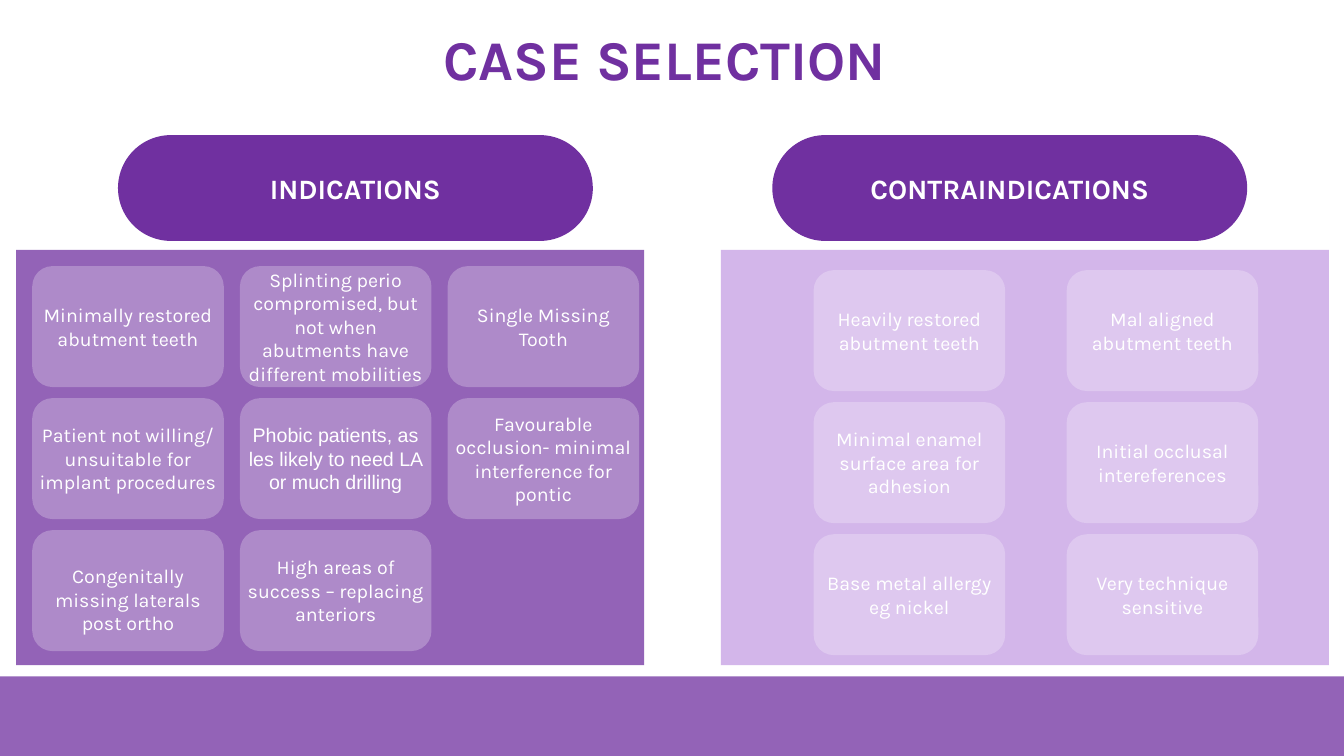
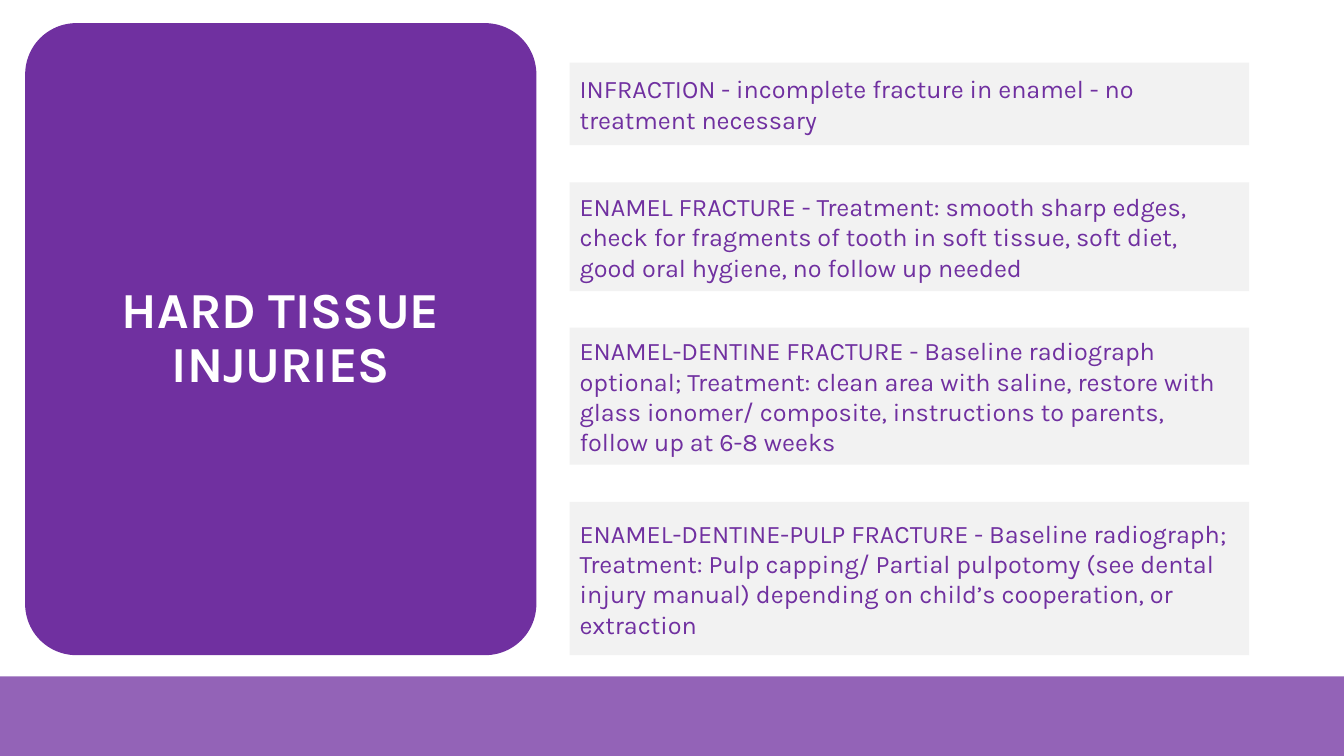
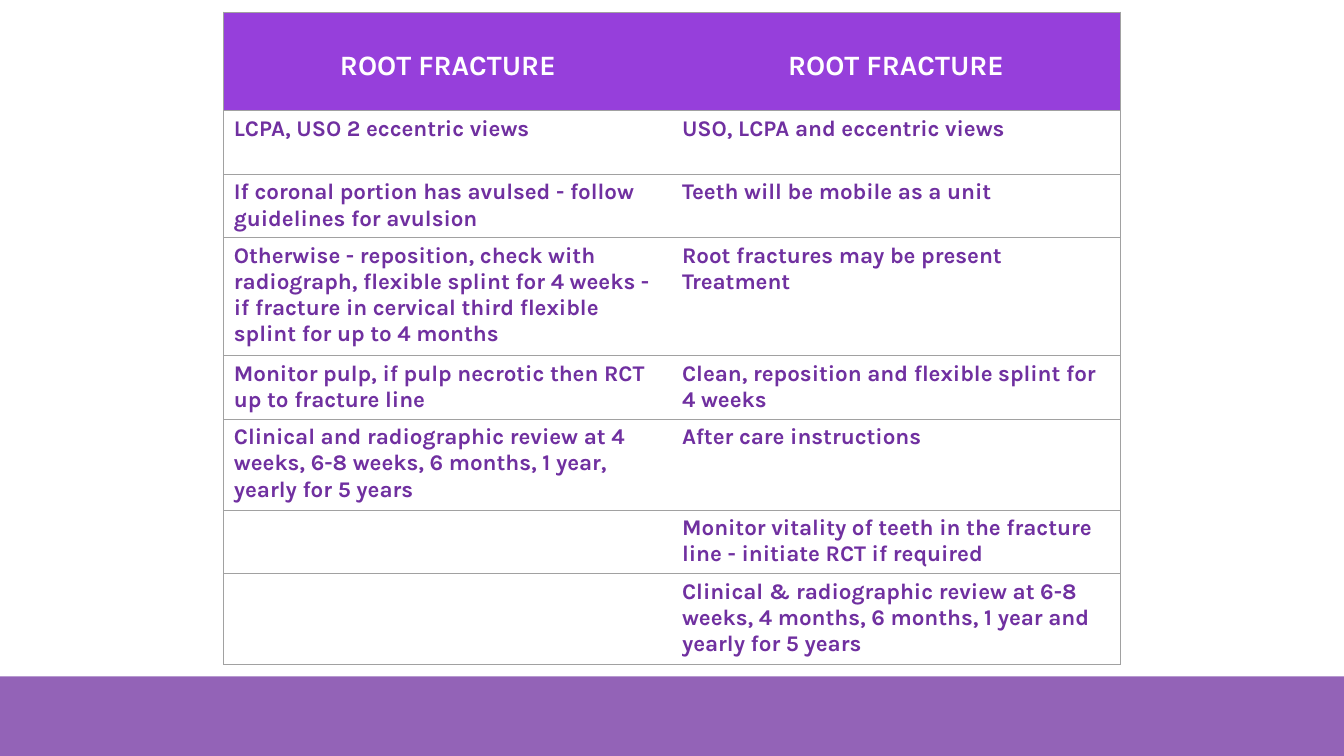
from dataclasses import dataclass

from lxml import etree
from pptx import Presentation
from pptx.dml.color import RGBColor
from pptx.enum.shapes import MSO_SHAPE
from pptx.enum.text import MSO_ANCHOR, MSO_AUTO_SIZE, PP_ALIGN
from pptx.oxml.ns import qn
from pptx.util import Inches, Pt

RECT, ROUND = MSO_SHAPE.RECTANGLE, MSO_SHAPE.ROUNDED_RECTANGLE
LEFT, CENTER = PP_ALIGN.LEFT, PP_ALIGN.CENTER
TOP, MIDDLE = MSO_ANCHOR.TOP, MSO_ANCHOR.MIDDLE
NO_AUTOFIT = MSO_AUTO_SIZE.NONE
TITLE_ONLY, BLANK = 5, 6


@dataclass(frozen=True)
class Theme:
    """Colours, fonts and type sizes of the deck."""
    purple: str = "7030A0"
    lilac: str = "D3B6EA"
    violet: str = "963FDB"
    white: str = "FFFFFF"
    pale: str = "F2F2F2"
    rule: str = "A1A1A1"
    font: str = "Karla"
    fallback: str = "Arial"
    title: int = 40
    panel_title: int = 36
    heading: int = 20
    body: int = 18
    cell: int = 16
    card: int = 14
    rule_width: float = 0.75
    band_alpha: int = 75
    card_alpha: int = 25


THEME = Theme()

INDICATIONS = [
    "Minimally restored abutment teeth",
    "Splinting perio compromised, but not when abutments have different mobilities",
    "Single Missing Tooth",
    "Patient not willing/ unsuitable for implant procedures",
    "Phobic patients, as les likely to need LA or much drilling",
    "Favourable occlusion- minimal interference for pontic",
    "Congenitally missing laterals post ortho",
    "High areas of success – replacing anteriors",
]
CONTRAINDICATIONS = [
    "Heavily restored abutment teeth",
    "Mal aligned abutment teeth",
    "Minimal enamel surface area for adhesion",
    "Initial occlusal intereferences",
    "Base metal allergy eg nickel",
    "Very technique sensitive",
]
FRACTURES = [
    (0.62, 0.82, "INFRACTION - incomplete fracture in enamel - no treatment necessary"),
    (1.81, 1.08, "ENAMEL FRACTURE - Treatment: smooth sharp edges, check for fragments "
                 "of tooth in soft tissue, soft diet, good oral hygiene, no follow up needed"),
    (3.25, 1.36, "ENAMEL-DENTINE FRACTURE - Baseline radiograph optional; Treatment: "
                 "clean area with saline, restore with glass ionomer/ composite, "
                 "instructions to parents, follow up at 6-8 weeks"),
    (4.98, 1.52, "ENAMEL-DENTINE-PULP FRACTURE - Baseline radiograph; Treatment: Pulp "
                 "capping/ Partial pulpotomy (see dental injury manual) depending on "
                 "child’s cooperation, or extraction"),
]
ROOT_ROWS = [
    (0.98, "ROOT FRACTURE", "ROOT FRACTURE"),
    (0.63, "LCPA, USO 2 eccentric views", "USO, LCPA and eccentric views"),
    (0.63, "If coronal portion has avulsed - follow guidelines for avulsion",
     "Teeth will be mobile as a unit"),
    (1.17, "Otherwise - reposition, check with radiograph, flexible splint for 4 weeks - "
           "if fracture in cervical third flexible splint for up to 4 months",
     "Root fractures may be present\nTreatment"),
    (0.63, "Monitor pulp, if pulp necrotic then RCT up to fracture line",
     "Clean, reposition and flexible splint for 4 weeks"),
    (0.9, "Clinical and radiographic review at 4 weeks, 6-8 weeks, 6 months, 1 year, "
          "yearly for 5 years", "After care instructions"),
    (0.63, "", "Monitor vitality of teeth in the fracture line - initiate RCT if required"),
    (0.9, "", "Clinical & radiographic review at 6-8 weeks, 4 months, 6 months, 1 year "
              "and yearly for 5 years"),
]


def apply(target, formats):
    """Set each attribute named in formats on target."""
    for attribute, value in formats.items():
        setattr(target, attribute, value)


def write(frame, text, size, color, bold=False, align=CENTER, font=THEME.font, spacing=1.0):
    """Fill a text frame, one paragraph per line of text."""
    frame.text = text
    for paragraph in frame.paragraphs:
        apply(paragraph, {"alignment": align, "line_spacing": spacing})
        apply(paragraph.font, {"name": font, "size": Pt(size), "bold": bold})
        paragraph.font.color.rgb = RGBColor.from_string(color)


def frame_format(frame, insets):
    """Wrap and centre a frame with left, top, right and bottom insets."""
    sides = ("margin_left", "margin_top", "margin_right", "margin_bottom")
    apply(frame, {"word_wrap": True, "vertical_anchor": MIDDLE, "auto_size": NO_AUTOFIT})
    apply(frame, {side: Inches(inset) for side, inset in zip(sides, insets)})


def add_block(slide, box, color, preset=RECT, corner=None, alpha=None):
    """Add a flat filled shape without outline."""
    block = slide.shapes.add_shape(preset, *map(Inches, box))
    block.shadow.inherit = False
    block.fill.solid()
    block.fill.fore_color.rgb = RGBColor.from_string(color)
    if alpha is not None:
        fill_color = block.element.spPr.find(f".//{qn('a:srgbClr')}")
        etree.SubElement(fill_color, qn("a:alpha"), val=str(alpha * 1000))
    block.line.fill.background()
    if corner is not None:
        block.adjustments[0] = corner
    return block


def add_title(slide, text, box, size, color):
    """Place and format the title in front of the shapes drawn so far."""
    title = slide.shapes.title
    apply(title, dict(zip(("left", "top", "width", "height"), map(Inches, box))))
    frame_format(title.text_frame, (0.1, 0.05, 0.1, 0.05))
    write(title.text_frame, text, size, color, bold=True, spacing=0.9)
    slide.shapes.element.append(title.element)


def add_master_band(prs, slide):
    """Draw the bottom band and hand it to the slide master."""
    band = add_block(slide, (0, 6.71, 13.33, 0.79), THEME.purple, alpha=THEME.band_alpha)
    band.element.nvSpPr.cNvPr.set("id", "20")
    prs.slide_master.shapes.element.append(band.element)


def add_heading(slide, text, left):
    """Add a pill-shaped column heading."""
    pill = add_block(slide, (left, 1.34, 4.71, 1.05), THEME.purple, ROUND, 0.5)
    frame_format(pill.text_frame, (0.1, 0.05, 0.1, 0.05))
    write(pill.text_frame, text, THEME.heading, THEME.white, bold=True)


def add_cards(slide, texts, columns, origin, pitch):
    """Lay out translucent cards row by row on a regular grid."""
    for index, text in enumerate(texts):
        row, column = divmod(index, columns)
        box = (origin[0] + column * pitch[0], origin[1] + row * pitch[1], 1.9, 1.2)
        card = add_block(slide, box, THEME.white, ROUND, 0.167, THEME.card_alpha)
        lowered = text.startswith("Congenitally")
        frame_format(card.text_frame, (0, 0.22 if lowered else 0.05, 0, 0.05))
        font = THEME.fallback if text.startswith("Phobic") else THEME.font
        write(card.text_frame, text, THEME.card, THEME.white, font=font)


def set_border(cell, position, side, visible):
    """Set one border of a cell, in schema order, to a rule or to nothing."""
    border = etree.Element(qn(f"a:ln{side}"), w=str(Pt(THEME.rule_width)))
    fill = etree.SubElement(border, qn("a:solidFill" if visible else "a:noFill"))
    if visible:
        etree.SubElement(fill, qn("a:srgbClr"), val=THEME.rule)
    cell._tc.get_or_add_tcPr().insert(position, border)


def format_cell(cell, text, header, first, last):
    """Write, fill and rule one table cell."""
    cell.fill.solid()
    cell.fill.fore_color.rgb = RGBColor.from_string(THEME.violet if header else THEME.white)
    apply(cell, {"vertical_anchor": MIDDLE if header else TOP,
                 "margin_top": Inches(0.15 if header else 0.05)})
    if header:
        write(cell.text_frame, text, THEME.heading, THEME.white, bold=True)
    else:
        write(cell.text_frame, text, THEME.cell, THEME.purple, bold=True, align=LEFT)
    for position, (side, visible) in enumerate(zip("LRTB", (first, last, True, True))):
        set_border(cell, position, side, visible)


def build_case_selection(slide):
    """Build the two columns of indications and contraindications."""
    add_title(slide, "CASE SELECTION", (1.96, 0.21, 9.26, 0.82), THEME.title, THEME.purple)
    add_block(slide, (7.15, 2.48, 6.03, 4.12), THEME.lilac)
    add_block(slide, (0.16, 2.48, 6.23, 4.12), THEME.purple, alpha=THEME.band_alpha)
    add_heading(slide, "INDICATIONS", 1.17)
    add_heading(slide, "CONTRAINDICATIONS", 7.66)
    add_cards(slide, INDICATIONS, 3, (0.32, 2.64), (2.06, 1.31))
    add_cards(slide, CONTRAINDICATIONS, 2, (8.07, 2.68), (2.51, 1.31))


def build_hard_tissue(slide):
    """Build the title panel and the fracture boxes."""
    panel = (0.25, 0.23, 5.07, 6.27)
    add_block(slide, panel, THEME.purple, ROUND, 0.1)
    add_title(slide, "HARD TISSUE INJURIES", panel, THEME.panel_title, THEME.white)
    for top, height, text in FRACTURES:
        note = add_block(slide, (5.65, top, 6.74, height), THEME.pale)
        frame_format(note.text_frame, (0.1, 0.1, 0.15, 0.1))
        write(note.text_frame, text, THEME.body, THEME.purple, align=LEFT)


def build_root_fracture(slide):
    """Build the root fracture table."""
    box = map(Inches, (2.22, 0.12, 8.89, 6.47))
    table = slide.shapes.add_table(len(ROOT_ROWS), 2, *box).table
    apply(table, {"first_row": False, "horz_banding": False})
    for row, (height, *texts) in enumerate(ROOT_ROWS):
        table.rows[row].height = Inches(height)
        for column, text in enumerate(texts):
            format_cell(table.cell(row, column), text, row == 0, column == 0, column == 1)


def main():
    """Build and save the deck."""
    prs = Presentation()
    apply(prs, {"slide_width": Inches(13.33), "slide_height": Inches(7.5)})
    pages = [(TITLE_ONLY, build_case_selection), (TITLE_ONLY, build_hard_tissue),
             (BLANK, build_root_fracture)]
    for layout, build in pages:
        build(prs.slides.add_slide(prs.slide_layouts[layout]))
    add_master_band(prs, prs.slides[0])
    prs.save("out.pptx")


if __name__ == "__main__":
    main()
